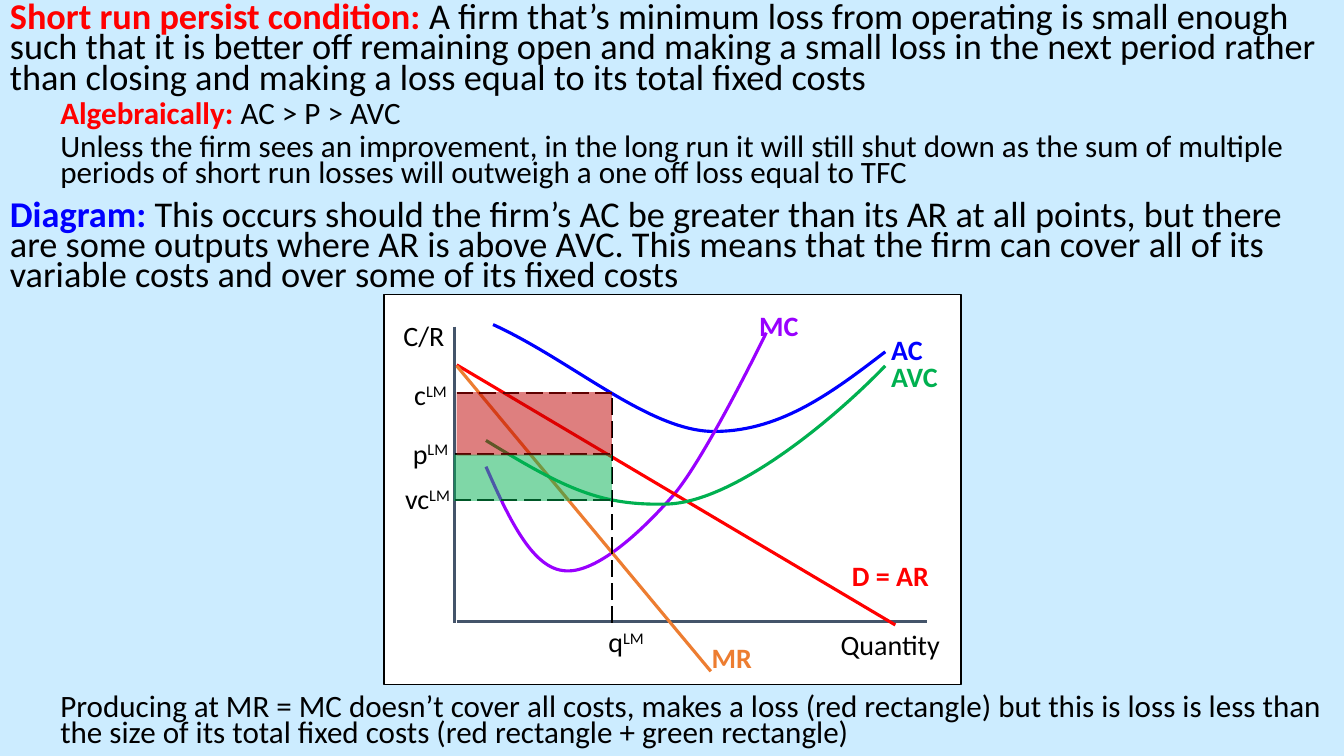
from lxml.etree import SubElement
from pptx import Presentation
from pptx.dml.color import RGBColor
from pptx.enum.dml import MSO_LINE
from pptx.enum.shapes import MSO_CONNECTOR, MSO_SHAPE
from pptx.enum.text import PP_ALIGN
from pptx.oxml.ns import qn
from pptx.util import Inches, Pt

BLACK = RGBColor(0x00, 0x00, 0x00)
WHITE = RGBColor(0xFF, 0xFF, 0xFF)
SKY = RGBColor(0xCC, 0xEC, 0xFF)
SLATE = RGBColor(0x44, 0x54, 0x6A)
RED = RGBColor(0xFF, 0x00, 0x00)
DARK_RED = RGBColor(0xBF, 0x00, 0x00)
BLUE = RGBColor(0x00, 0x00, 0xFF)
PURPLE = RGBColor(0x99, 0x00, 0xFF)
GREEN = RGBColor(0x00, 0xB0, 0x50)
ORANGE = RGBColor(0xED, 0x7D, 0x31)


def add_span(para, text, size=20, color=BLACK, bold=False, raised=False):
    span = para.add_run()
    span.text = text
    span.font.name = "Calibri"
    span.font.size = Pt(size)
    span.font.bold = bold
    span.font.color.rgb = color
    if raised:
        span._r.get_or_add_rPr().set("baseline", "30000")


class EconomicsSlide:
    """Holds the slide, its diagram group and the shared style."""

    MAIN_SIZE, SUB_SIZE = 25.9, 22.2
    CURVE_WIDTH, GUIDE_WIDTH = 2.25, 1.5

    def __init__(self, deck):
        self.slide = deck.slides.add_slide(deck.slide_layouts[6])
        self.slide.background.fill.solid()
        self.slide.background.fill.fore_color.rgb = SKY
        self.diagram = None

    def start_diagram(self):
        self.diagram = self.slide.shapes.add_group_shape().shapes

    def text_block(self, top, height, paragraphs):
        """Each paragraph is (level, heading, heading colour, body)."""
        box = self.slide.shapes.add_textbox(0, Inches(top), Inches(13.33), Inches(height))
        frame = box.text_frame
        frame.word_wrap = True
        for index, (level, heading, color, body) in enumerate(paragraphs):
            para = frame.add_paragraph() if index else frame.paragraphs[0]
            para.line_spacing = 0.7
            para.space_before = Pt(5 if level else 10)
            para.level = level
            para._p.get_or_add_pPr().set("marL", str(Inches(0.5 * level)))
            size = self.SUB_SIZE if level else self.MAIN_SIZE
            if heading:
                add_span(para, heading, size=size, color=color, bold=True)
            add_span(para, body, size=size)

    def label(self, left, top, width, text, color=BLACK, raised="", height=0.43):
        """Black labels are centred; coloured curve names are bold and left-aligned."""
        box = self.diagram.add_textbox(Inches(left), Inches(top), Inches(width), Inches(height))
        box.text_frame.word_wrap = True
        para = box.text_frame.paragraphs[0]
        para.alignment = PP_ALIGN.CENTER if color == BLACK else PP_ALIGN.LEFT
        add_span(para, text, color=color, bold=color != BLACK)
        if raised:
            add_span(para, raised, raised=True)

    def line(self, start, end, color, width=CURVE_WIDTH, dash=None):
        line = self.diagram.add_connector(
            MSO_CONNECTOR.STRAIGHT, *(Inches(value) for value in start + end))
        line.line.color.rgb = color
        line.line.width = Pt(width)
        if dash:
            line.line.dash_style = dash
        SubElement(line._element.spPr, qn("a:effectLst"))

    def guide(self, start, end):
        self.line(start, end, BLACK, self.GUIDE_WIDTH, MSO_LINE.LONG_DASH)

    def curve(self, points, color):
        """Points are a start followed by Bezier triples."""
        (start_x, start_y), *others = [(Inches(x), Inches(y)) for x, y in points]
        builder = self.diagram.build_freeform(start_x, start_y)
        builder.add_line_segments(others, close=False)
        shape = builder.convert_to_shape()
        shape.shadow.inherit = False
        shape.fill.background()
        shape.line.color.rgb = color
        shape.line.width = Pt(self.CURVE_WIDTH)
        # Turn every three straight segments into one Bezier segment
        segments = shape._element.xpath(".//a:lnTo")
        for first in range(0, len(segments), 3):
            outline = segments[first].getparent()
            bezier = SubElement(outline, qn("a:cubicBezTo"))
            for segment in segments[first:first + 3]:
                bezier.append(segment[0])
                outline.remove(segment)

    def rectangle(self, left, top, width, height, fill, border=None, alpha=None):
        shape = self.diagram.add_shape(
            MSO_SHAPE.RECTANGLE, Inches(left), Inches(top), Inches(width), Inches(height))
        shape.shadow.inherit = False
        shape.fill.solid()
        shape.fill.fore_color.rgb = fill
        if border is None:
            shape.line.fill.background()
        else:
            shape.line.color.rgb = border
            shape.line.width = Pt(1)
        if alpha:
            color = shape._element.spPr.find(qn("a:solidFill"))[0]
            SubElement(color, qn("a:alpha")).set("val", str(alpha * 1000))


def main():
    deck = Presentation()
    deck.slide_width, deck.slide_height = Inches(13.33), Inches(7.5)
    page = EconomicsSlide(deck)

    # Explanation above and below the diagram
    page.text_block(0, 2.9, [
        (0, "Short run persist condition:", RED,
         " A firm that’s minimum loss from operating is small enough such that it is better "
         "off remaining open and making a small loss in the next period rather than closing "
         "and making a loss equal to its total fixed costs"),
        (1, "Algebraically: ", RED, "AC > P > AVC"),
        (1, "", BLACK,
         "Unless the firm sees an improvement, in the long run it will still shut down as the "
         "sum of multiple periods of short run losses will outweigh a one off loss equal to TFC"),
        (0, "Diagram:", BLUE,
         " This occurs should the firm’s AC be greater than its AR at all points, but there "
         "are some outputs where AR is above AVC. This means that the firm can cover all of "
         "its variable costs and over some of its fixed costs"),
    ])
    page.text_block(6.86, 0.64, [
        (1, "", BLACK,
         "Producing at MR = MC doesn’t cover all costs, makes a loss (red rectangle) but this "
         "is loss is less than the size of its total fixed costs (red rectangle + green "
         "rectangle)"),
    ])

    # Panel and axes
    page.start_diagram()
    page.rectangle(3.81, 2.92, 5.72, 3.87, WHITE, border=BLACK)
    page.line((4.51, 3.24), (4.51, 6.18), SLATE)
    page.line((4.53, 6.17), (9.19, 6.17), SLATE)
    page.label(8.13, 6.18, 1.4, "Quantity")
    page.label(3.68, 3.11, 1.05, "C/R")

    # Cost and revenue curves
    page.curve([(8.78, 3.49), (8.27, 3.88), (7.76, 4.27), (7.11, 4.28),
                (6.46, 4.3), (5.68, 3.58), (4.89, 3.22)], BLUE)
    page.curve([(4.82, 4.63), (5.04, 5.13), (5.27, 5.62), (5.58, 5.66),
                (5.89, 5.71), (6.35, 5.29), (6.69, 4.9),
                (7.02, 4.5), (7.6, 3.3), (7.6, 3.3)], PURPLE)
    page.line((4.53, 3.62), (8.88, 6.2), RED)
    page.line((4.53, 3.63), (7.05, 6.66), ORANGE)
    page.curve([(8.78, 3.63), (8.26, 4.17), (7.29, 4.97), (6.63, 5),
                (5.97, 5.02), (5.62, 4.86), (4.82, 4.37)], GREEN)

    # Curve names
    for left, top, width, name, color in [
        (8.74, 3.25, 0.92, "AC", BLUE),
        (7.43, 3.01, 0.92, "MC", PURPLE),
        (8.74, 3.52, 0.92, "AVC", GREEN),
        (8.35, 5.49, 1.23, "D = AR", RED),
        (6.96, 6.31, 1.24, "MR", ORANGE),
    ]:
        page.label(left, top, width, name, color)

    # Loss-minimising output, price and costs
    for left, top, name in [
        (5.8, 6.15, "q"), (3.86, 4.28, "p"), (3.86, 3.7, "c"), (3.83, 4.73, "vc"),
    ]:
        page.label(left, top, 0.82, name, raised="LM", height=0.37)
    page.guide((6.07, 6.18), (6.07, 3.92))
    for right, level in [(6.07, 3.9), (6.05, 4.5), (6.05, 4.96)]:
        page.guide((right, level), (right - 1.54, level))

    # Loss and covered fixed cost areas
    page.rectangle(4.53, 3.89, 1.54, 0.63, DARK_RED, alpha=50)
    page.rectangle(4.5, 4.51, 1.57, 0.46, GREEN, alpha=50)

    deck.save("out.pptx")


if __name__ == "__main__":
    main()
